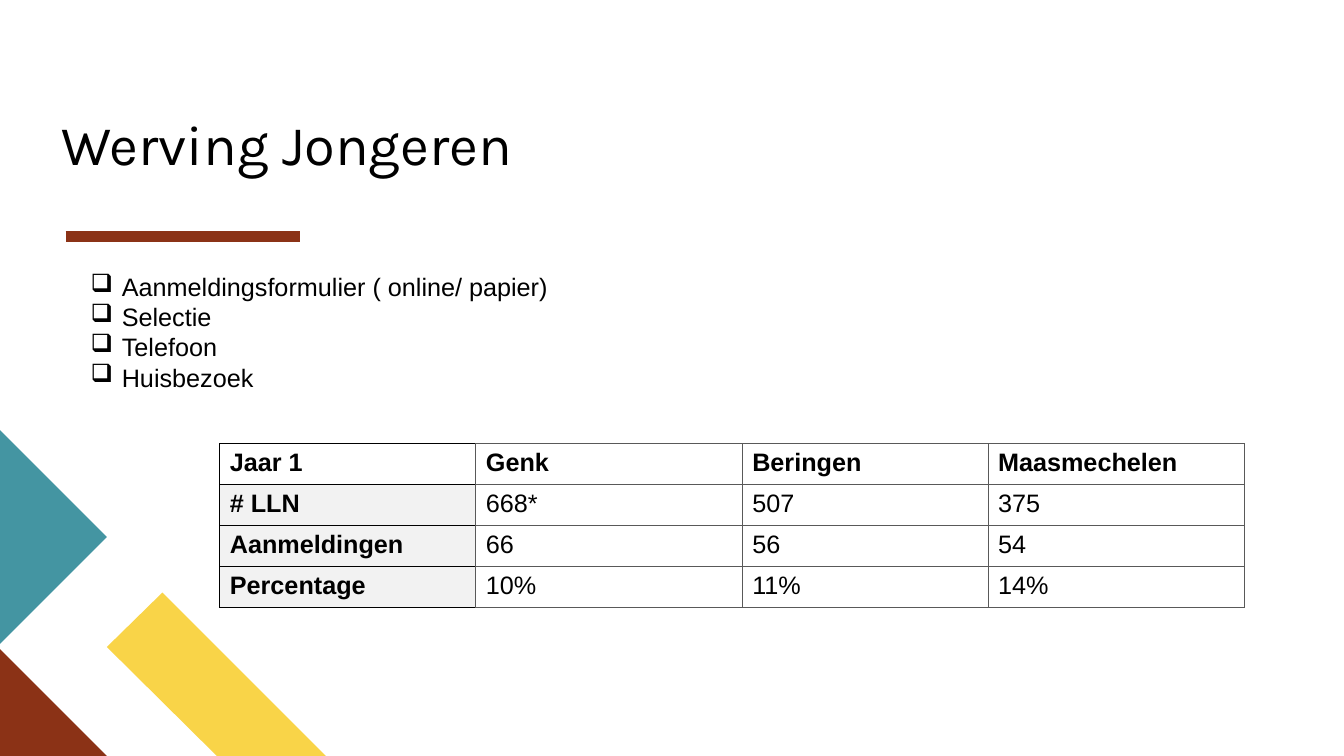
import pptx
import pptx.dml.color
import pptx.enum.shapes
import pptx.enum.text
import pptx.oxml
import pptx.oxml.ns
import pptx.util
from lxml import etree

INCH = pptx.util.Inches
BLACK, GREY = "000000", "595959"
RED, TEAL, YELLOW, PALE = "8B3216", "4495A2", "F9D448", "F2F2F2"

STEPS = ["Aanmeldingsformulier ( online/ papier)", "Selectie", "Telefoon", "Huisbezoek"]
RESULTS = [
    ["Jaar 1", "Genk", "Beringen", "Maasmechelen"],
    ["# LLN", "668*", "507", "375"],
    ["Aanmeldingen", "66", "56", "54"],
    ["Percentage", "10%", "11%", "14%"],
]


def rgb(value):
    return pptx.dml.color.RGBColor.from_string(value)


def add_xml(parent, tag, **attrs):
    return etree.SubElement(parent, pptx.oxml.ns.qn(tag), attrs)


def set_font(p, size, name, bold=False):
    p.font.size, p.font.name, p.font.bold = pptx.util.Pt(size), name, bold
    p.font.color.rgb = rgb(BLACK)


def text_frame(s, box):
    tf = s.shapes.add_textbox(*map(INCH, box)).text_frame
    tf.word_wrap = True
    return tf


def add_polygon(s, points, color):
    start, *rest = [(INCH(x), INCH(y)) for x, y in points]
    builder = s.shapes.build_freeform(*start)
    builder.add_line_segments(rest, close=True)
    sp = builder.convert_to_shape()
    sp.shadow.inherit = False
    sp.fill.solid()
    sp.fill.fore_color.rgb = rgb(color)
    sp.line.fill.background()


def add_corner(s, bottom, unit):
    """Corner decoration growing up from the bottom left, in steps of unit."""
    def place(points):
        return [(x * unit, bottom - y * unit) for x, y in points]

    add_polygon(s, place([(1, 1.02), (1.52, 1.53), (3.05, 0), (2.03, 0)]), YELLOW)
    add_polygon(s, place([(0, 0), (0, 1), (1, 0)]), RED)
    add_polygon(s, place([(0, 1.05), (0, 3.05), (1, 2.05)]), TEAL)


def add_heading(s, box):
    tf = text_frame(s, box)
    tf.margin_left = tf.margin_right = tf.margin_top = tf.margin_bottom = 0
    tf.vertical_anchor = pptx.enum.text.MSO_ANCHOR.BOTTOM
    p = tf.paragraphs[0]
    p.text = "Werving Jongeren"
    p.line_spacing = 0.8
    set_font(p, 40, "Karla")

    left, top, _, height = box
    x, y = left + 0.04, top + height + 0.6
    rule = s.shapes.add_connector(pptx.enum.shapes.MSO_CONNECTOR.STRAIGHT,
                                  *map(INCH, (x, y, x + 2.33, y)))
    rule.line.color.rgb = rgb(RED)
    rule.line.width = pptx.util.Pt(8)
    add_xml(rule._element.spPr, "a:effectLst")


def add_steps(s, box):
    tf = text_frame(s, box)
    for i, step in enumerate(STEPS):
        p = tf.paragraphs[0] if i == 0 else tf.add_paragraph()
        p.text = step
        set_font(p, 18, "Arial")
        pPr = p._p.get_or_add_pPr()
        indent = INCH(0.31)
        pPr.set("marL", str(indent))
        pPr.set("indent", str(-indent))
        bullet = pptx.oxml.parse_xml(
            f'<a:buChar {pptx.oxml.ns.nsdecls("a")} char="❑"/>')
        pPr.insert(0, bullet)


def set_borders(cell, colors):
    """Draw the left, right, top and bottom borders in the given colours."""
    tcPr = cell._tc.get_or_add_tcPr()
    for side, color in zip("LRTB", colors):
        ln = add_xml(tcPr, f"a:ln{side}", w=str(pptx.util.Pt(0.75)))
        add_xml(add_xml(ln, "a:solidFill"), "a:srgbClr", val=color)


def add_results(s, box, widths):
    """Recruitment table; widths are shares of the box width."""
    left, top, width, height = box
    table = s.shapes.add_table(len(RESULTS), len(widths), *map(INCH, box)).table
    table.first_row = table.horz_banding = False
    for column, share in zip(table.columns, widths):
        column.width = INCH(width * share)
    for r, row in enumerate(RESULTS):
        table.rows[r].height = INCH(height / len(RESULTS))
        for c, value in enumerate(row):
            cell = table.cell(r, c)
            edge = BLACK if c == 0 else GREY
            set_borders(cell, (edge, GREY, edge, edge))
            if r and c == 0:
                cell.fill.solid()
                cell.fill.fore_color.rgb = rgb(PALE)
            else:
                cell.fill.background()
            p = cell.text_frame.paragraphs[0]
            p.text = value
            set_font(p, 18, "Arial", bold=r == 0 or c == 0)


def main():
    prs = pptx.Presentation()
    prs.slide_width, prs.slide_height = INCH(13.33), INCH(7.5)
    s = prs.slides.add_slide(prs.slide_layouts[6])
    add_heading(s, (0.61, 0.75, 11.89, 1))
    add_corner(s, bottom=7.5, unit=1.06)
    add_results(s, (2.18, 4.4, 10.16, 1.63), (0.25, 0.26, 0.24, 0.25))
    add_steps(s, (0.8, 2.64, 4.88, 1.31))
    prs.save("out.pptx")


if __name__ == "__main__":
    main()
